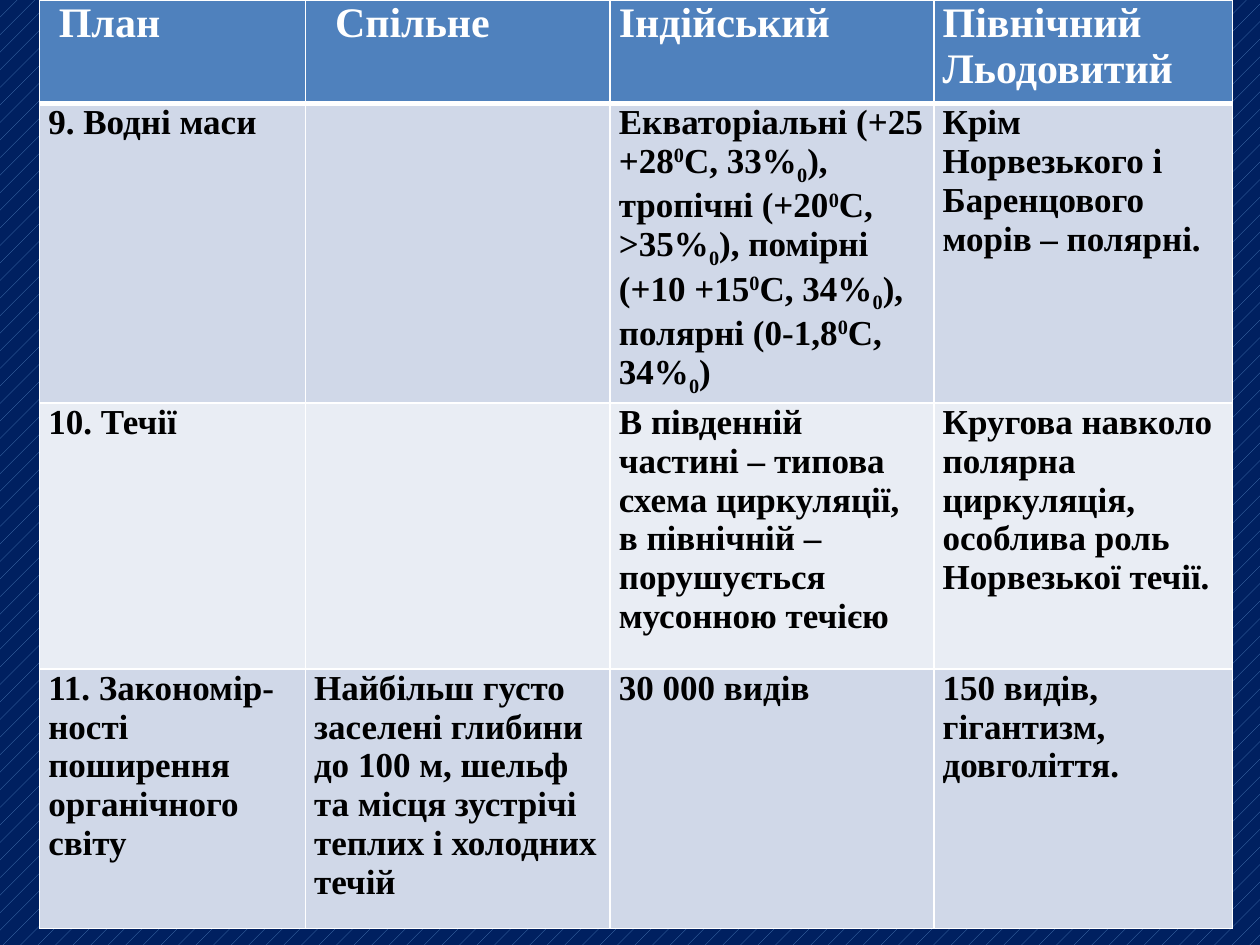
from lxml import etree
from pptx import Presentation
from pptx.dml.color import RGBColor
from pptx.enum.dml import MSO_PATTERN
from pptx.oxml.ns import qn
from pptx.util import Pt

DOTS = MSO_PATTERN.PERCENT_5
FONT = "Times New Roman"
COLORS = {
    "navy": "002060",
    "header": "4F81BD",
    "odd": "D0D8E8",
    "even": "E9EDF4",
    "white": "FFFFFF",
    "black": "000000",
}
BASELINES = {"^": "30000", "_": "-25000"}
COLUMNS = [151.9, 174.2, 185, 170.6]
ROWS = [59, 171.4, 151.9, 148.3]
HEADER_INDENTS = [6, 12, 0, 0]
CELLS = [
    ["План", "Спільне", "Індійський", "Північний Льодовитий"],
    [
        "9. Водні маси",
        "",
        "Екваторіальні (+25 +28|^0|С, 33%|_0|), тропічні (+20|^0|С, >35%|_0|), "
        "помірні (+10 +15|^0|С, 34%|_0|), полярні (0-1,8|^0|С, 34%|_0|)",
        "Крім Норвезького і Баренцового морів – полярні.",
    ],
    [
        "10. Течії",
        "",
        "В південній частині – типова схема циркуляції, "
        "в північній – порушується мусонною течією",
        "Кругова навколо полярна циркуляція, особлива роль Норвезької течії.",
    ],
    [
        "11. Закономір-ності поширення органічного світу",
        "Найбільш густо заселені глибини до 100 м, шельф "
        "та місця зустрічі теплих і холодних течій",
        "30 000 видів",
        "150 видів, гігантизм, довголіття.",
    ],
]


def rgb(name):
    return RGBColor.from_string(COLORS[name])


def set_background(slide):
    fill = slide.background.fill
    fill.patterned()
    fill.pattern = DOTS
    fill.fore_color.rgb = rgb("header")
    fill.back_color.rgb = rgb("navy")


def set_borders(cell, top, bottom):
    tcPr = cell._tc.get_or_add_tcPr()
    for side, width in (("L", 1), ("R", 1), ("T", top), ("B", bottom)):
        ln = etree.SubElement(tcPr, qn(f"a:ln{side}"), w=str(Pt(width)))
        solid = etree.SubElement(ln, qn("a:solidFill"))
        etree.SubElement(solid, qn("a:srgbClr"), val=COLORS["white"])


def write_text(cell, text, size, color):
    """Write text whose |^raised| and |_lowered| parts are set off by bars."""
    p = cell.text_frame.paragraphs[0]
    for part in filter(None, text.split("|")):
        r = p.add_run()
        r.text = part.lstrip("^_")
        r.font.name = FONT
        r.font.size = Pt(size)
        r.font.bold = True
        r.font.color.rgb = rgb(color)
        if part[0] in BASELINES:
            r.font._element.set("baseline", BASELINES[part[0]])


def format_cell(cell, fill, indent, top, bottom):
    cell.margin_left = Pt(5 + indent)
    cell.margin_right = Pt(5)
    cell.margin_top = cell.margin_bottom = Pt(0)
    set_borders(cell, top, bottom)
    cell.fill.solid()
    cell.fill.fore_color.rgb = rgb(fill)


def add_ocean_table(slide):
    table = slide.shapes.add_table(
        len(ROWS), len(COLUMNS), Pt(22.6), Pt(0), Pt(sum(COLUMNS)), Pt(sum(ROWS))
    ).table
    for column, width in zip(table.columns, COLUMNS):
        column.width = Pt(width)
    for i, (height, texts) in enumerate(zip(ROWS, CELLS)):
        table.rows[i].height = Pt(height)
        header = i == 0
        fill = "header" if header else ("even", "odd")[i % 2]
        size, color = (24, "white") if header else (20, "black")
        for j, text in enumerate(texts):
            cell = table.cell(i, j)
            indent = HEADER_INDENTS[j] if header else 0
            format_cell(cell, fill, indent, 3 if i == 1 else 1, 3 if header else 1)
            write_text(cell, text, size, color)


def main():
    prs = Presentation()
    prs.slide_width, prs.slide_height = Pt(720), Pt(540)
    slide = prs.slides.add_slide(prs.slide_layouts[6])
    set_background(slide)
    add_ocean_table(slide)
    prs.save("out.pptx")


if __name__ == "__main__":
    main()
